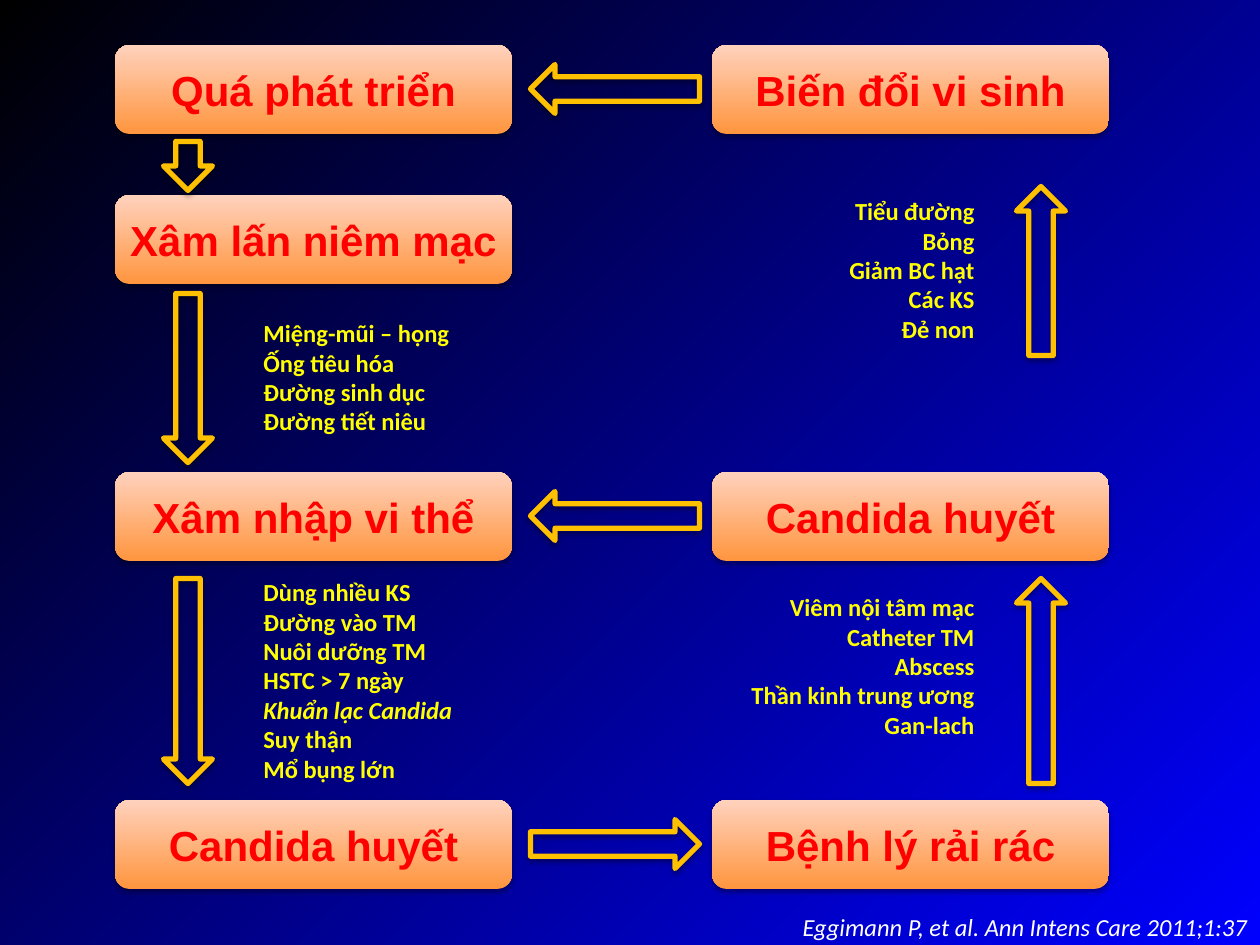
from typing import NamedTuple

import pptx
import pptx.dml.color
import pptx.enum.shapes
import pptx.enum.text
import pptx.oxml
import pptx.oxml.ns
import pptx.util

PX = 914400 / 126
COLORS = {"blue": "0000FF", "black": "000000", "orange": "FF953E", "peach": "FFD2BD",
          "red": "FF0000", "yellow": "FFFF00", "gold": "FFC000", "white": "FFFFFF"}
SHAPE = pptx.enum.shapes.MSO_SHAPE
ALIGN = pptx.enum.text.PP_ALIGN
ANCHOR = pptx.enum.text.MSO_ANCHOR
NS = pptx.oxml.ns.nsdecls("a")

# Stage grid
LEFT, RIGHT = 115, 712
ROWS = (45, 195, 472, 800)
BOX_W, BOX_H = 397, 89
ARROW_W = 49
LEFT_ARROW_X, RIGHT_ARROW_X, MIDDLE_X = 188, 1041, 615
SHORT, MEDIUM, LONG = 49, 169, 205
DOWN, TO_LEFT, UP, TO_RIGHT = 0, 90, 180, 270


class Stage(NamedTuple):
    x: int
    y: int
    text: str


class Note(NamedTuple):
    x: int
    y: int
    w: int
    h: int
    align: ALIGN
    lines: list[str]
    italic: str = ""


class Arrow(NamedTuple):
    cx: int
    cy: int
    length: int
    rotation: int


STAGES = [
    Stage(LEFT, ROWS[0], "Quá phát triển"),
    Stage(RIGHT, ROWS[0], "Biến đổi vi sinh"),
    Stage(LEFT, ROWS[1], "Xâm lấn niêm mạc"),
    Stage(LEFT, ROWS[2], "Xâm nhập vi thể"),
    Stage(LEFT, ROWS[3], "Candida huyết"),
    Stage(RIGHT, ROWS[3], "Bệnh lý rải rác"),
    Stage(RIGHT, ROWS[2], "Candida huyết"),
]
NOTES = [
    Note(251, 312, 218, 131, ALIGN.LEFT,
         ["Miệng-mũi – họng", "Ống tiêu hóa", "Đường sinh dục", "Đường tiết niêu"]),
    Note(251, 571, 215, 220, ALIGN.LEFT,
         ["Dùng nhiều KS", "Đường vào TM", "Nuôi dưỡng TM", "HSTC > 7 ngày",
          "Khuẩn lạc Candida", "Suy thận", "Mổ bụng lớn"], italic="Khuẩn lạc Candida"),
    Note(737, 586, 250, 161, ALIGN.RIGHT,
         ["Viêm nội tâm mạc", "Catheter TM", "Abscess", "Thần kinh trung ương", "Gan-lach"]),
    Note(836, 190, 151, 161, ALIGN.RIGHT,
         ["Tiểu đường", "Bỏng", "Giảm BC hạt", "Các KS", "Đẻ non"]),
]
ARROWS = [
    Arrow(LEFT_ARROW_X, 166, SHORT, DOWN),
    Arrow(LEFT_ARROW_X, 378, MEDIUM, DOWN),
    Arrow(LEFT_ARROW_X, 681, LONG, DOWN),
    Arrow(RIGHT_ARROW_X, 271, MEDIUM, UP),
    Arrow(RIGHT_ARROW_X, 681, LONG, UP),
    Arrow(MIDDLE_X, ROWS[3] + BOX_H // 2, MEDIUM, TO_RIGHT),
    Arrow(MIDDLE_X, ROWS[2] + BOX_H // 2, MEDIUM, TO_LEFT),
    Arrow(MIDDLE_X, ROWS[0] + BOX_H // 2, MEDIUM, TO_LEFT),
]


def emu(*lengths: float) -> list[int]:
    return [round(n * PX) for n in lengths]


def rgb(name: str) -> pptx.dml.color.RGBColor:
    return pptx.dml.color.RGBColor.from_string(COLORS[name])


def set_gradient(fill, start: str, end: str) -> None:
    fill.gradient()
    for stop, position, color in zip(fill.gradient_stops, (0, 1), (start, end)):
        stop.position = position
        stop.color.rgb = rgb(color)


def add_shadow(sp, opacity: int, distance: int) -> None:
    sp.shadow.inherit = False
    effects = sp._element.spPr.find(pptx.oxml.ns.qn("a:effectLst"))
    effects.append(pptx.oxml.parse_xml(
        f'<a:outerShdw {NS} blurRad="40000" dist="{distance}" dir="5400000" rotWithShape="0">'
        f'<a:srgbClr val="{COLORS["black"]}"><a:alpha val="{opacity * 1000}"/></a:srgbClr>'
        '</a:outerShdw>'))


def add_text(p, text: str, *, size: int, color: str, font: str = "Calibri",
             bold: bool = False, italic: bool = False, align=ALIGN.LEFT) -> None:
    p.alignment = align
    r = p.add_run()
    r.text = text
    r.font.name, r.font.size = font, pptx.util.Pt(size)
    r.font.bold, r.font.italic = bold, italic
    r.font.color.rgb = rgb(color)


def draw_stage(s, stage: Stage) -> None:
    sp = s.shapes.add_shape(SHAPE.ROUNDED_RECTANGLE, *emu(stage.x, stage.y, BOX_W, BOX_H))
    set_gradient(sp.fill, "orange", "peach")
    sp.fill.gradient_angle = 90
    sp.line.fill.background()
    add_shadow(sp, 35, 23000)
    tf = sp.text_frame
    tf.word_wrap = False
    tf.vertical_anchor = ANCHOR.MIDDLE
    add_text(tf.paragraphs[0], stage.text, size=24, color="red", font="Arial",
             bold=True, align=ALIGN.CENTER)


def draw_note(s, note: Note) -> None:
    tf = s.shapes.add_textbox(*emu(note.x, note.y, note.w, note.h)).text_frame
    tf.word_wrap = False
    tf.auto_size = pptx.enum.text.MSO_AUTO_SIZE.SHAPE_TO_FIT_TEXT
    for i, line in enumerate(note.lines):
        p = tf.add_paragraph() if i else tf.paragraphs[0]
        add_text(p, line, size=14, color="yellow", bold=True,
                 italic=line == note.italic, align=note.align)


def draw_arrow(s, arrow: Arrow) -> None:
    sp = s.shapes.add_shape(SHAPE.DOWN_ARROW, *emu(
        arrow.cx - ARROW_W / 2, arrow.cy - arrow.length / 2, ARROW_W, arrow.length))
    sp.rotation = arrow.rotation
    sp.fill.background()
    sp.line.color.rgb = rgb("gold")
    sp.line.width = pptx.util.Pt(3)
    add_shadow(sp, 38, 20000)


def draw_background(s) -> None:
    set_gradient(s.background.fill, "blue", "black")
    lin = s.element.xpath(".//p:bg//a:lin")[0]
    lin.getparent().replace(lin, pptx.oxml.parse_xml(
        f'<a:path {NS} path="circle"><a:fillToRect l="100000" t="100000"/></a:path>'))


def main() -> None:
    prs = pptx.Presentation()
    prs.slide_width, prs.slide_height = emu(1260, 945)
    s = prs.slides.add_slide(prs.slide_layouts[6])
    draw_background(s)

    # Stages of infection
    for stage in STAGES:
        draw_stage(s, stage)

    # Risk factors and sites
    for note in NOTES:
        draw_note(s, note)

    # Citation
    tf = s.shapes.add_textbox(*emu(630, 906, 630, 43)).text_frame
    tf.word_wrap = True
    add_text(tf.paragraphs[0], "Eggimann P, et al. Ann Intens Care 2011;1:37",
             size=14, color="white", italic=True, align=ALIGN.RIGHT)

    # Flow
    for arrow in ARROWS:
        draw_arrow(s, arrow)

    prs.save("out.pptx")


if __name__ == "__main__":
    main()
